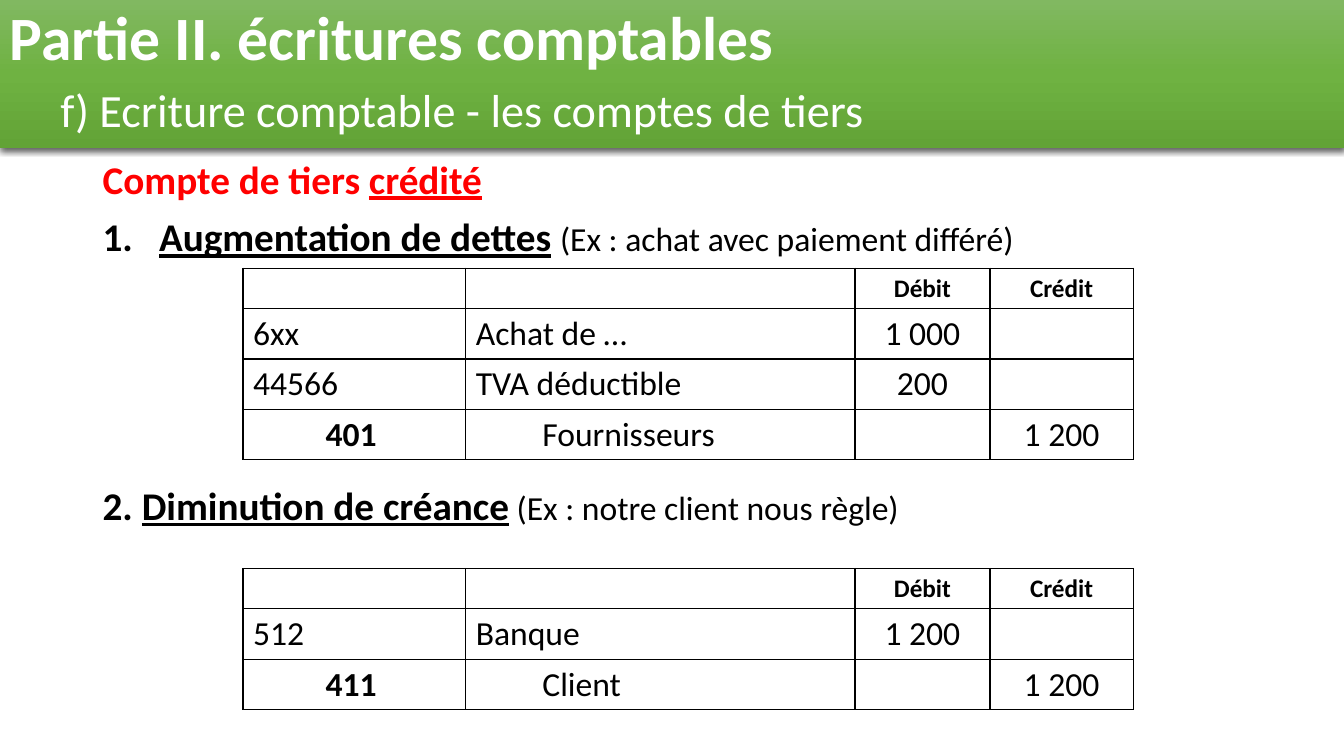
from dataclasses import dataclass

from lxml.etree import SubElement
from pptx import Presentation
from pptx.dml.color import RGBColor
from pptx.enum.shapes import MSO_SHAPE
from pptx.enum.text import MSO_ANCHOR, PP_ALIGN
from pptx.oxml import parse_xml
from pptx.oxml.ns import nsdecls, qn
from pptx.util import Inches, Pt


@dataclass(frozen=True)
class Theme:
    font: str = "Calibri"
    black: str = "000000"
    white: str = "FFFFFF"
    red: str = "FF0000"
    banner: tuple = ((0, "81B861"), (50, "6FB242"), (100, "62A336"))
    title: int = 44
    subtitle: int = 33
    heading: int = 28
    body: int = 24
    column_label: int = 18


theme = Theme()


def add_run(paragraph, text, size, color=theme.black, bold=False, underline=False):
    run = paragraph.add_run()
    run.text = text
    run.font.name = theme.font
    run.font.size = Pt(size)
    run.font.bold = bold
    run.font.underline = underline
    run.font.color.rgb = RGBColor.from_string(color)


def draw_borders(cell, open_side=None):
    """Rule all four sides of a cell in black, except open_side."""
    properties = cell._tc.get_or_add_tcPr()
    for side in ("lnL", "lnR", "lnT", "lnB"):
        paint = ("<a:noFill/>" if side == open_side else
                 f'<a:solidFill><a:srgbClr val="{theme.black}"/></a:solidFill>')
        properties.append(parse_xml(
            f'<a:{side} {nsdecls("a")} w="{Pt(1)}">{paint}</a:{side}>'))


prs = Presentation()
prs.slide_width, prs.slide_height = Inches(13.33), Inches(7.5)
slide = prs.slides.add_slide(prs.slide_layouts[6])

# Headings above the two journal entries
HEADING_GAP = Pt(11)
NUMBER_INDENT = Inches(0.56)
headings = []
for top in (1.54, 4.78):
    box = slide.shapes.add_textbox(Inches(0.92), Inches(top), Inches(11.5), Inches(2.06))
    box.text_frame.word_wrap = True
    headings.append(box.text_frame)
credited, decrease = headings

credited_line = credited.paragraphs[0]
add_run(credited_line, "Compte de tiers ", theme.heading, theme.red, bold=True)
add_run(credited_line, "crédité", theme.heading, theme.red, bold=True, underline=True)

increase_line = credited.add_paragraph()
increase_line.space_before = HEADING_GAP
add_run(increase_line, "Augmentation de dettes", theme.heading, bold=True, underline=True)
add_run(increase_line, " ", theme.heading)
add_run(increase_line, "(Ex : achat avec paiement différé)", theme.body)
numbering = increase_line._p.get_or_add_pPr()
numbering.set("marL", str(NUMBER_INDENT))
numbering.set("indent", str(-NUMBER_INDENT))
SubElement(numbering, qn("a:buFont"), typeface=theme.font)
SubElement(numbering, qn("a:buAutoNum"), type="arabicPeriod")

decrease_line = decrease.paragraphs[0]
add_run(decrease_line, "2. ", theme.heading, bold=True)
add_run(decrease_line, "Diminution de créance", theme.heading, bold=True, underline=True)
add_run(decrease_line, " (Ex : notre client nous règle)", theme.body)

for line in (credited_line, increase_line, decrease_line):
    line.line_spacing = 0.9

# Journal entries: account, label, debit, credit; the last row is the credited account
COLUMN_WIDTHS = (0.72, 1.49, 0.66, 3.2, 1.34, 1.42)
HEADER_HEIGHT, ROW_HEIGHT = 0.4, 0.5
HEADER = ("", "", "Débit", "Crédit")
entries = (
    (2.66, (("6xx", "Achat de …", "1 000", ""),
            ("44566", "TVA déductible", "200", ""),
            ("401", "Fournisseurs", "", "1 200"))),
    (5.64, (("512", "Banque", "1 200", ""),
            ("411", "Client", "", "1 200"))),
)
for top, postings in entries:
    rows = (HEADER, *postings)
    last = len(rows) - 1
    journal = slide.shapes.add_table(
        len(rows), len(COLUMN_WIDTHS), Inches(2.41), Inches(top),
        Inches(sum(COLUMN_WIDTHS)), Inches(HEADER_HEIGHT + ROW_HEIGHT * last)).table
    journal.first_row = journal.horz_banding = False
    for column, width in zip(journal.columns, COLUMN_WIDTHS):
        column.width = Inches(width)

    for r, values in enumerate(rows):
        is_header, is_credited = r == 0, r == last
        journal.rows[r].height = Inches(HEADER_HEIGHT if is_header else ROW_HEIGHT)
        for c in range(len(COLUMN_WIDTHS)):
            cell = journal.cell(r, c)
            open_side = {0: "lnR", 1: "lnL", 2: "lnR", 3: "lnL"}.get(c) if is_credited else None
            draw_borders(cell, open_side)
            cell.fill.background()
        if not is_credited:
            for c in (0, 2):
                journal.cell(r, c).merge(journal.cell(r, c + 1))

        value_columns = (1, 3, 4, 5) if is_credited else (0, 2, 4, 5)
        for c, value in zip(value_columns, values):
            if value:
                paragraph = journal.cell(r, c).text_frame.paragraphs[0]
                paragraph.alignment = PP_ALIGN.CENTER if c >= 4 else PP_ALIGN.LEFT
                add_run(paragraph, value, theme.column_label if is_header else theme.body,
                        bold=is_header or c == 1)

# Title banner
banner = slide.shapes.add_shape(MSO_SHAPE.RECTANGLE, 0, 0, prs.slide_width, Inches(1.47))
banner.line.fill.background()
banner.fill.gradient()
banner.fill.gradient_angle = 270
stops = banner._element.spPr.find(qn("a:gradFill")).find(qn("a:gsLst"))
for stop in list(stops):
    stops.remove(stop)
for position, color in theme.banner:
    stop = SubElement(stops, qn("a:gs"), pos=str(position * 1000))
    SubElement(stop, qn("a:srgbClr"), val=color)

banner.shadow.inherit = False
effects = banner._element.spPr.find(qn("a:effectLst"))
effects.append(parse_xml(
    f'<a:outerShdw {nsdecls("a")} blurRad="{Pt(4.5)}" dist="{Pt(1.5)}" dir="5400000" '
    f'algn="ctr" rotWithShape="0"><a:srgbClr val="{theme.black}">'
    '<a:alpha val="63000"/></a:srgbClr></a:outerShdw>'))

banner.text_frame.word_wrap = True
banner.text_frame.vertical_anchor = MSO_ANCHOR.MIDDLE
title = banner.text_frame.paragraphs[0]
title.alignment = PP_ALIGN.LEFT
title.line_spacing = 0.9
add_run(title, "Partie II. écritures comptables", theme.title, theme.white, bold=True)
title.add_line_break()
add_run(title, "\t", theme.title, theme.white, bold=True)
add_run(title, "f) Ecriture comptable - les comptes de tiers", theme.subtitle, theme.white)

prs.save("out.pptx")
